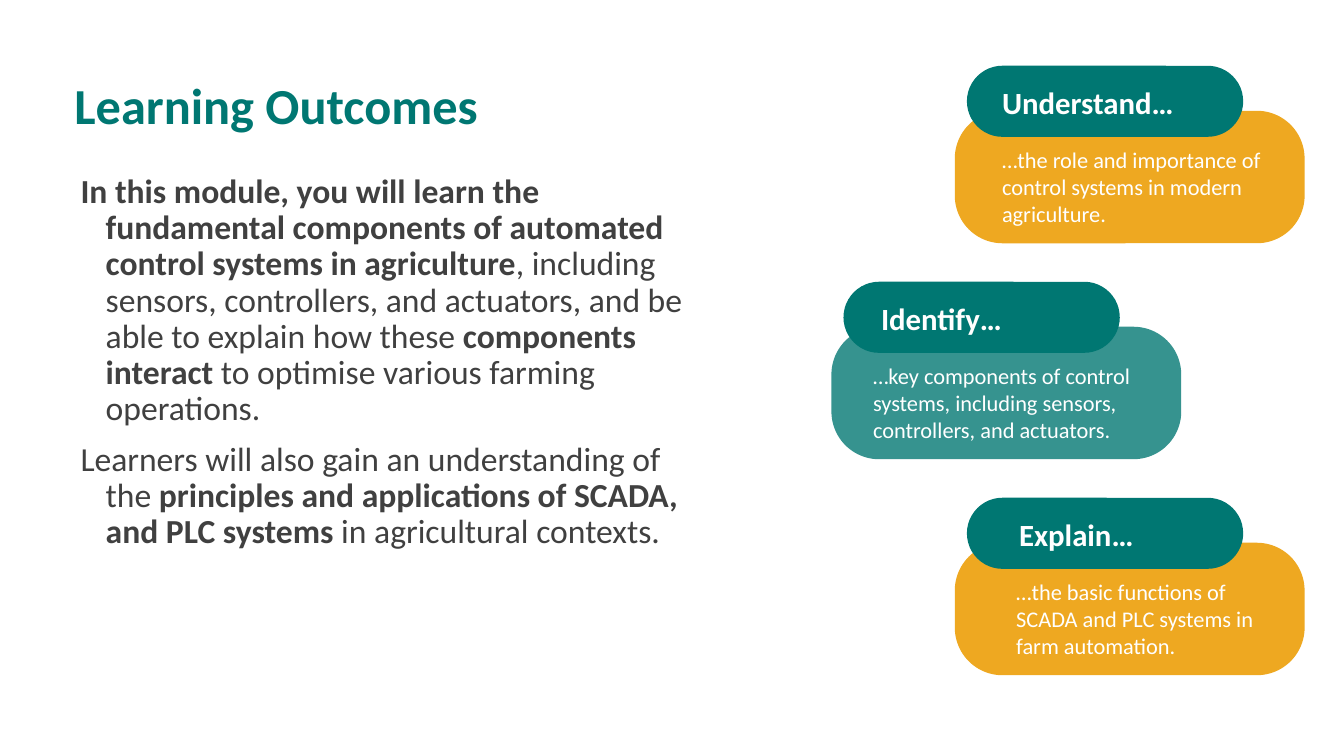
from dataclasses import dataclass

from lxml import etree
from pptx import Presentation
from pptx import util as u
from pptx.dml.color import RGBColor
from pptx.enum import shapes, text
from pptx.oxml.ns import qn

SLIDE_W, SLIDE_H = u.Inches(13.33), u.Inches(7.5)


@dataclass(frozen=True)
class Theme:
    teal: str = "007772"
    amber: str = "EEA821"
    body: str = "404040"
    white: str = "FFFFFF"
    font: str = "Calibri"
    title_size: int = 36
    body_size: int = 24
    heading_size: int = 22
    detail_size: int = 16


@dataclass(frozen=True)
class Box:
    """Percentages of the slide's width and height."""
    left: float
    top: float
    width: float
    height: float

    def emu(self) -> tuple[int, int, int, int]:
        return (int(SLIDE_W * self.left / 100), int(SLIDE_H * self.top / 100),
                int(SLIDE_W * self.width / 100), int(SLIDE_H * self.height / 100))


@dataclass(frozen=True)
class Run:
    words: str
    bold: bool = False


@dataclass(frozen=True)
class Outcome:
    heading: str
    detail: str
    left: float
    heading_left: float
    detail_left: float
    colour: str
    opacity: int = 100


THEME = Theme()
FIRST_ROW, ROW_STEP = 8.7, 28.57

OUTCOMES = [
    Outcome("Understand…", "…the role and importance of control systems in modern agriculture.",
            71.04, 73.82, 73.82, THEME.amber),
    Outcome("Identify…", "…key components of control systems, including sensors, "
            "controllers, and actuators.", 61.86, 64.82, 64.22, THEME.teal, 79),
    Outcome("Explain…", "…the basic functions of SCADA and PLC systems in farm automation.",
            71.04, 75.09, 74.87, THEME.amber),
]

TITLE = [[Run("Learning Outcomes", True)]]
SUMMARY = [
    [Run("In this module, you will learn the fundamental components of automated "
         "control systems in agriculture", True),
     Run(", including sensors, controllers, and actuators, and be able to explain how these"),
     Run(" components interact ", True),
     Run("to optimise various farming operations.")],
    [Run("Learners will also gain an understanding of the "),
     Run("principles and applications of SCADA, and PLC systems", True),
     Run(" in agricultural contexts.")],
]


def add_text(slide, box: Box, paragraphs: list[list[Run]], size: int, colour: str,
             spacing: float = 1.0, hanging: float = 0) -> None:
    frame = slide.shapes.add_textbox(*box.emu()).text_frame
    frame.word_wrap = True
    frame.vertical_anchor = text.MSO_ANCHOR.TOP
    for index, runs in enumerate(paragraphs):
        paragraph = frame.add_paragraph() if index else frame.paragraphs[0]
        paragraph.line_spacing = spacing
        if index:
            paragraph.space_before = u.Pt(10)
        if hanging:
            properties = paragraph._p.get_or_add_pPr()
            properties.set("marL", str(u.Inches(hanging)))
            properties.set("indent", str(-u.Inches(hanging)))
        for part in runs:
            run = paragraph.add_run()
            run.text = part.words
            run.font.name = THEME.font
            run.font.size = u.Pt(size)
            run.font.bold = part.bold
            run.font.color.rgb = RGBColor.from_string(colour)


def add_rounded(slide, box: Box, colour: str, rounding: float, opacity: int = 100) -> None:
    panel = slide.shapes.add_shape(shapes.MSO_SHAPE.ROUNDED_RECTANGLE, *box.emu())
    panel.adjustments[0] = rounding
    panel.shadow.inherit = False
    panel.line.fill.background()
    panel.fill.solid()
    panel.fill.fore_color.rgb = RGBColor.from_string(colour)
    if opacity < 100:
        fill = panel._element.spPr.find(qn("a:solidFill"))
        etree.SubElement(fill[0], qn("a:alpha")).set("val", str(opacity * 1000))


def add_outcome(slide, outcome: Outcome, top: float) -> None:
    # Card with its heading pill overlapping the upper edge
    add_rounded(slide, Box(outcome.left, top + 5.95, 26.03, 17.53),
                outcome.colour, 0.36, outcome.opacity)
    add_rounded(slide, Box(outcome.left + 0.9, top, 20.56, 9.4), THEME.teal, 0.5)
    # Wording
    add_text(slide, Box(outcome.heading_left, top + 1.7, 18, 6.27),
             [[Run(outcome.heading, True)]], THEME.heading_size, THEME.white)
    add_text(slide, Box(outcome.detail_left, top + 10, 21.38, 12.13),
             [[Run(outcome.detail)]], THEME.detail_size, THEME.white)


def main() -> None:
    deck = Presentation()
    deck.slide_width, deck.slide_height = SLIDE_W, SLIDE_H
    slide = deck.slides.add_slide(deck.slide_layouts[6])

    # Outcome cards on the right
    for row, outcome in enumerate(OUTCOMES):
        add_outcome(slide, outcome, FIRST_ROW + row * ROW_STEP)

    # Title and summary on the left
    add_text(slide, Box(5.25, 22.4, 48.31, 72.13), SUMMARY,
             THEME.body_size, THEME.body, 0.9, hanging=0.25)
    add_text(slide, Box(4.8, 10, 60, 9.47), TITLE, THEME.title_size, THEME.teal, 0.9)

    deck.save("out.pptx")


if __name__ == "__main__":
    main()
